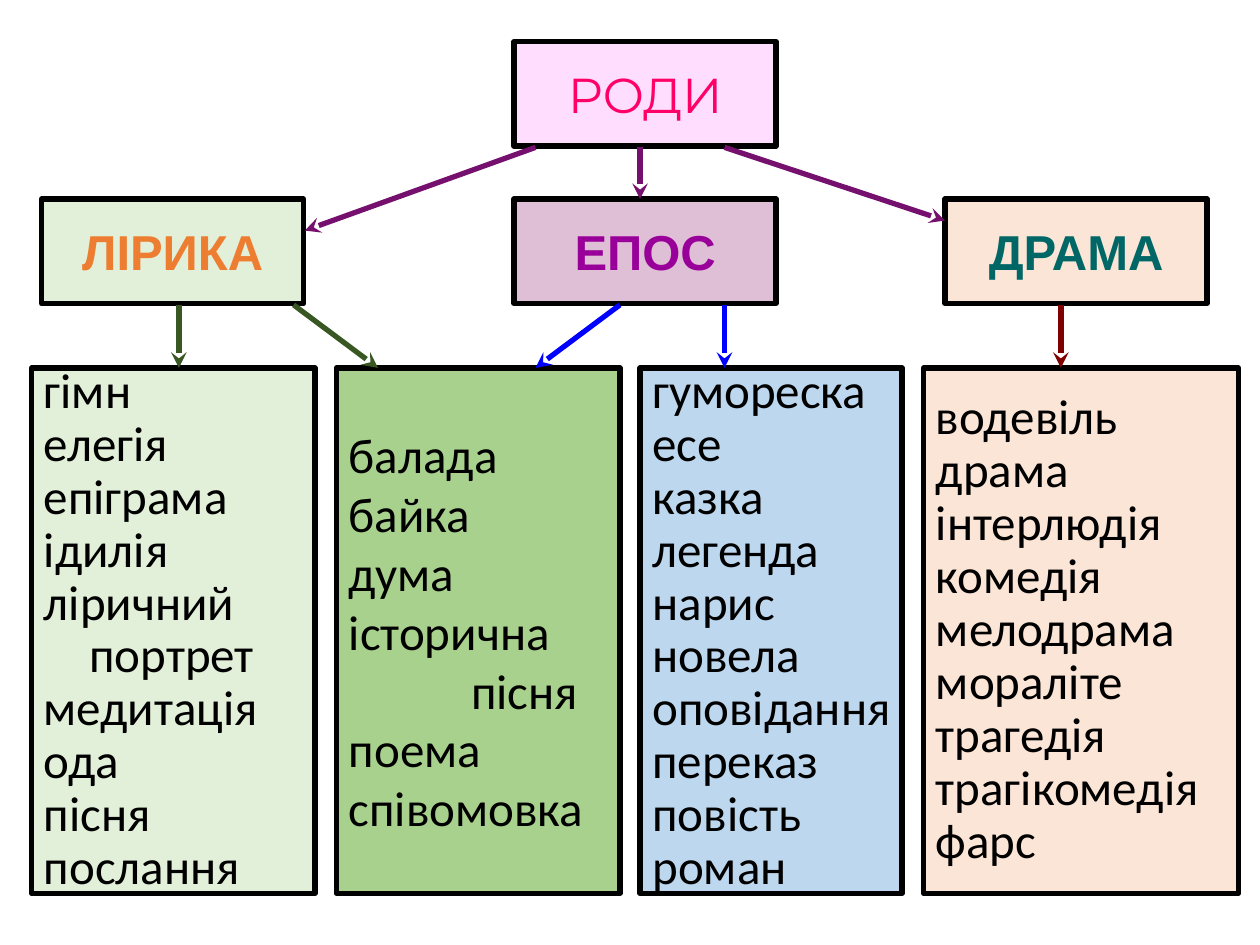
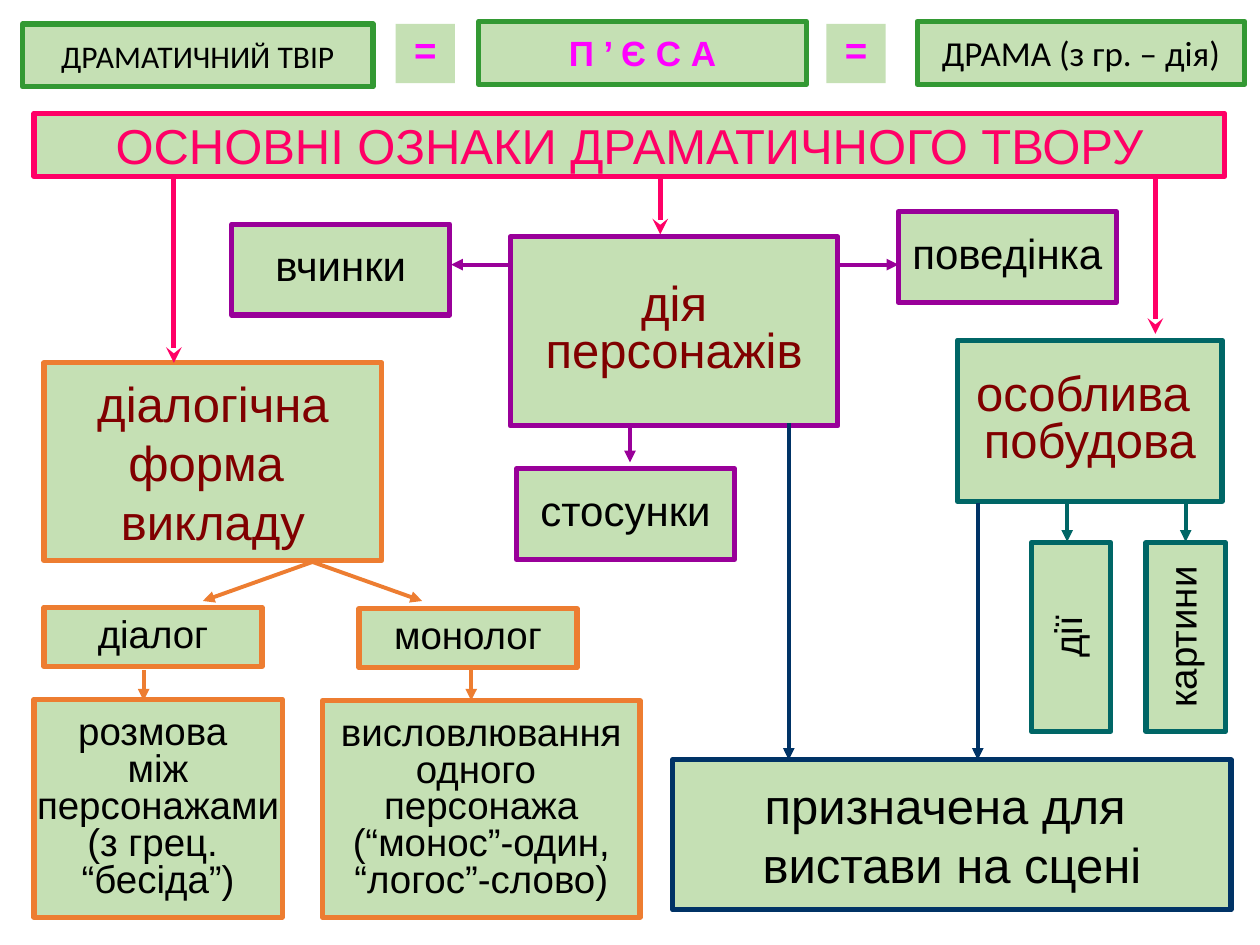
from lxml import etree
from pptx import Presentation
from pptx.dml.color import RGBColor
from pptx.enum.shapes import MSO_CONNECTOR, MSO_SHAPE
from pptx.enum.text import MSO_ANCHOR, MSO_AUTO_SIZE, PP_ALIGN
from pptx.oxml.ns import qn
from pptx.util import Inches, Pt

RECTANGLE = MSO_SHAPE.RECTANGLE
STRAIGHT = MSO_CONNECTOR.STRAIGHT
MIDDLE = MSO_ANCHOR.MIDDLE
NO_AUTOFIT = MSO_AUTO_SIZE.NONE
LEFT, CENTER = PP_ALIGN.LEFT, PP_ALIGN.CENTER
TITLE_ONLY = 5

COLORS = {
    "black": "000000", "ink": "0D0D0D", "pink": "FF0066", "blush": "FFDDFF",
    "red": "C00000", "maroon": "800000", "brown": "843C0B", "orange": "ED7D31",
    "peach": "FBE5D6", "purple": "990099", "plum": "76106F", "mauve": "DFBFD6",
    "magenta": "FF00FF", "teal": "006666", "navy": "003366", "blue": "0000FF",
    "sky": "BDD7EE", "green": "339933", "forest": "385723", "mint": "E2F0D9",
    "leaf": "A9D18E", "sage": "C5E0B4",
}

# Text formats: font values, colour, optional glyph outline, alignment, spacing
FORMATS = {
    "root": {"font": {"name": "Montserrat", "size": Pt(28)}, "color": "pink", "outline": "red"},
    "lyric": {"font": {"name": "Arial", "size": Pt(28), "bold": True},
              "color": "orange", "outline": "brown"},
    "epic": {"font": {"name": "Arial", "size": Pt(28), "bold": True},
             "color": "purple", "outline": "ink"},
    "drama": {"font": {"name": "Arial", "size": Pt(28), "bold": True},
              "color": "teal", "outline": "forest"},
    "list": {"font": {"name": "Calibri", "size": Pt(28)}, "align": LEFT, "spacing": 0.9},
    "loose list": {"font": {"name": "Calibri", "size": Pt(28)}, "align": LEFT},
    "heading": {"font": {"name": "Arial", "size": Pt(28)}, "color": "pink", "outline": "maroon"},
    "feature": {"font": {"name": "Arial", "size": Pt(28)}, "color": "maroon"},
    "tight feature": {"font": {"name": "Arial", "size": Pt(28)}, "color": "maroon",
                      "spacing": 0.8},
    "purpose": {"font": {"name": "Arial", "size": Pt(28)}},
    "aspect": {"font": {"name": "Arial", "size": Pt(24)}, "spacing": 0.8},
    "detail": {"font": {"name": "Arial", "size": Pt(22)}, "spacing": 0.8},
    "equals": {"font": {"name": "Arial", "size": Pt(22), "bold": True},
               "color": "magenta", "spacing": 0.8},
    "work": {"font": {"name": "Calibri", "size": Pt(18)}},
    "play": {"font": {"name": "Arial", "size": Pt(20), "bold": True},
             "color": "magenta", "outline": "maroon"},
    "origin": {"font": {"name": "Calibri", "size": Pt(20)}},
}


def rgb(color):
    return RGBColor.from_string(COLORS[color])


class Diagram:
    """Builds the pages of a deck of boxes joined by arrows."""

    def __init__(self):
        self.deck = Presentation()
        self.deck.slide_width, self.deck.slide_height = Inches(10), Inches(7.5)
        self.page = None

    def add_page(self):
        self.page = self.deck.slides.add_slide(self.deck.slide_layouts[TITLE_ONLY])

    def title(self, place, text, style, fill, line):
        self.dress(self.page.shapes.title, place, text, style, fill, line)

    def box(self, place, text, style, fill="sage", line="black", indents=None, rotation=0):
        box = self.page.shapes.add_shape(RECTANGLE, 0, 0, 0, 0)
        box.shadow.inherit = False
        box.rotation = rotation
        self.dress(box, place, text, style, fill, line, indents or {})

    def dress(self, box, place, text, style, fill, line, indents=()):
        for side, value in zip(("left", "top", "width", "height"), place):
            setattr(box, side, Inches(value))
        box.fill.solid()
        box.fill.fore_color.rgb = rgb(fill)
        if line:
            box.line.color.rgb = rgb(line)
            box.line.width = Pt(3)
        else:
            box.line.fill.background()
        frame = box.text_frame
        settings = {"auto_size": NO_AUTOFIT, "word_wrap": False, "vertical_anchor": MIDDLE}
        for name, value in settings.items():
            setattr(frame, name, value)
        for number, words in enumerate(text.split("\n")):
            para = frame.add_paragraph() if number else frame.paragraphs[0]
            self.fill_para(para, words, FORMATS[style])
            if words in indents:
                para._p.get_or_add_pPr().set("marL", str(Inches(indents[words])))

    def fill_para(self, para, words, style):
        para.alignment = style.get("align", CENTER)
        para.line_spacing = style.get("spacing", 1.0)
        span = para.add_run()
        span.text = words
        for name, value in style["font"].items():
            setattr(span.font, name, value)
        span.font.color.rgb = rgb(style.get("color", "black"))
        if "outline" in style:
            outline = etree.Element(qn("a:ln"), w=str(Pt(0.75)))
            fill = etree.SubElement(outline, qn("a:solidFill"))
            etree.SubElement(fill, qn("a:srgbClr"), val=COLORS[style["outline"]])
            span._r.get_or_add_rPr().insert(0, outline)

    def arrow(self, start, end, color, width=3, head="stealth"):
        arrow = self.page.shapes.add_connector(
            STRAIGHT, *(Inches(value) for value in (*start, *end)))
        arrow.line.color.rgb = rgb(color)
        arrow.line.width = Pt(width)
        etree.SubElement(arrow.line._get_or_add_ln(), qn("a:tailEnd"), type=head)
        etree.SubElement(arrow._element.spPr, qn("a:effectLst"))

    def thin_arrow(self, start, end, color):
        self.arrow(start, end, color, 2.25, "triangle")


def add_genres(diagram):
    diagram.add_page()
    # Literary kinds
    width, height = 2.08, 0.83
    diagram.title((4.08, 0.33, width, height), "РОДИ", "root", "blush", "black")
    kinds = [
        (0.33, "ЛІРИКА", "lyric", "mint"),
        (4.08, "ЕПОС", "epic", "mauve"),
        (7.5, "ДРАМА", "drama", "peach"),
    ]
    for left, name, style, fill in kinds:
        diagram.box((left, 1.58, width, height), name, style, fill)

    # Genres of each kind; the second column belongs to both lyric and epic
    genres = [
        (0.25, 2.25, "list", "mint",
         "гімн\nелегія\nепіграма\nідилія\nліричний\nпортрет\nмедитація\nода\nпісня\nпослання",
         {"портрет": 0.36}),
        (2.67, 2.25, "loose list", "leaf",
         "балада\nбайка\nдума\nісторична\nпісня\nпоема\nспівомовка", {"пісня": 0.97}),
        (5.08, 2.08, "list", "sky",
         "гумореска\nесе\nказка\nлегенда\nнарис\nновела\nоповідання\nпереказ\nповість\nроман",
         {}),
        (7.33, 2.5, "list", "peach",
         "водевіль\nдрама\nінтерлюдія\nкомедія\nмелодрама\nмораліте\nтрагедія\n"
         "трагікомедія\nфарс", {}),
    ]
    for left, column_width, style, fill, names, indents in genres:
        diagram.box((left, 2.92, column_width, 4.17), names, style, fill, indents=indents)

    # Arrows from the root, then from the kinds
    for start, end in [(5.08, (5.08, 1.58)), (4.25, (2.42, 1.83)), (5.75, (7.5, 1.75))]:
        diagram.arrow((start, 1.17), end, "plum")
    branches = [
        (1.42, 1.42, "forest"), (2.33, 3, "forest"),
        (4.92, 4.25, "blue"), (5.75, 5.75, "blue"), (8.42, 8.42, "maroon"),
    ]
    for start, end, color in branches:
        diagram.arrow((start, 2.42), (end, 2.92), color)


def add_drama(diagram):
    diagram.add_page()
    diagram.title((0.27, 0.9, 9.45, 0.5), "ОСНОВНІ ОЗНАКИ ДРАМАТИЧНОГО ТВОРУ",
                  "heading", "sage", "pink")

    boxes = [
        # Equation of terms
        ((0.18, 0.19, 2.78, 0.5), "ДРАМАТИЧНИЙ ТВІР", "work", "green"),
        ((3.8, 0.17, 2.6, 0.5), "П ’ Є С А", "play", "green"),
        ((7.28, 0.17, 2.6, 0.5), "ДРАМА (з гр. – дія)", "origin", "green"),
        ((3.14, 0.19, 0.47, 0.47), "=", "equals", None),
        ((6.56, 0.19, 0.47, 0.47), "=", "equals", None),
        # Dialogue form
        ((0.35, 2.88, 2.68, 1.57), "діалогічна\nформа \nвикладу", "feature", "orange"),
        ((0.35, 4.82, 1.73, 0.47), "діалог", "detail", "orange"),
        ((2.85, 4.83, 1.73, 0.47), "монолог", "detail", "orange"),
        ((0.27, 5.55, 1.97, 1.73), "розмова \nміж\nперсонажами\n(з грец. \n“бесіда”)",
         "detail", "orange"),
        ((2.56, 5.56, 2.52, 1.72),
         "висловлювання\nодного \nперсонажа\n(“монос”-один,\n“логос”-слово)",
         "detail", "orange"),
        # Action of the characters
        ((4.05, 1.88, 2.6, 1.5), "дія\nперсонажів", "tight feature", "purple"),
        ((1.84, 1.78, 1.73, 0.72), "вчинки", "aspect", "purple"),
        ((4.1, 3.72, 1.73, 0.72), "стосунки", "aspect", "purple"),
        ((7.13, 1.68, 1.73, 0.72), "поведінка", "aspect", "purple"),
        # Structure and purpose
        ((7.6, 2.7, 2.1, 1.28), "особлива \nпобудова", "tight feature", "teal"),
        ((5.34, 6.03, 4.43, 1.19), "призначена для \nвистави на сцені", "purpose", "navy"),
    ]
    for place, text, style, line in boxes:
        diagram.box(place, text, style, line=line)
    for left, part in [(7.75, "дії"), (8.66, "картини")]:
        diagram.box((left, 4.74, 1.5, 0.63), part, "detail", line="teal", rotation=270)

    # Arrows from the heading to the features
    for across, bottom in [(1.38, 2.88), (9.17, 2.65), (5.24, 1.86)]:
        diagram.arrow((across, 1.39), (across, bottom), "pink")

    # Slanted and level arrows to the details
    for end in (3.35, 1.61):
        diagram.thin_arrow((2.48, 4.46), (end, 4.77), "orange")
    for start, end in [(6.65, 7.13), (4.06, 3.58)]:
        diagram.thin_arrow((start, 2.1), (end, 2.1), "purple")

    # Upright arrows to the details
    drops = [
        (1.14, 5.32, 5.56, "orange"), (3.74, 5.32, 5.56, "orange"),
        (5, 3.36, 3.67, "purple"),
        (8.47, 3.99, 4.3, "teal"), (9.41, 3.99, 4.3, "teal"),
        (6.26, 3.36, 6.03, "navy"), (7.76, 3.99, 6.03, "navy"),
    ]
    for across, top, bottom, color in drops:
        diagram.thin_arrow((across, top), (across, bottom), color)


def main():
    diagram = Diagram()
    add_genres(diagram)
    add_drama(diagram)
    diagram.deck.save("out.pptx")


if __name__ == "__main__":
    main()
